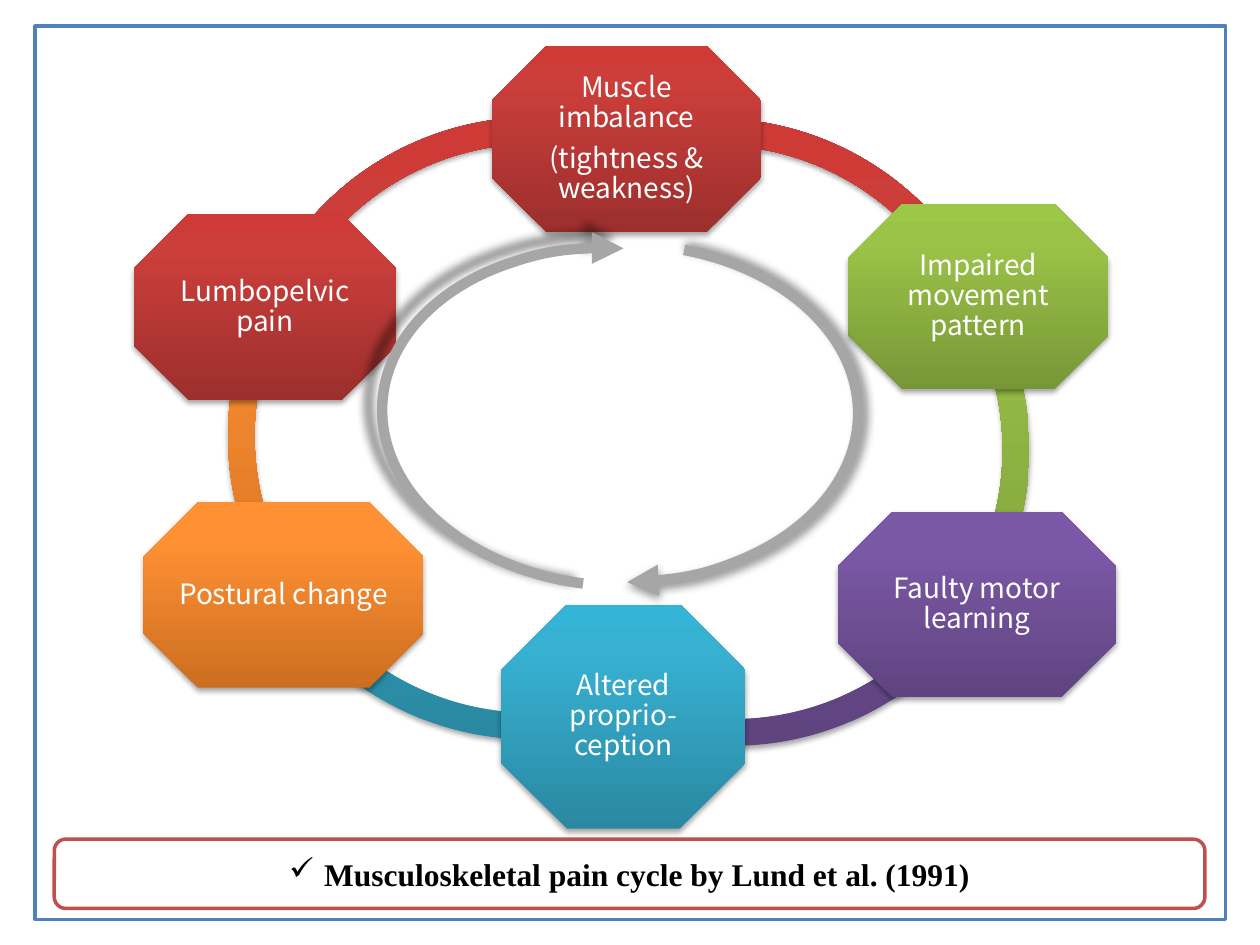
from copy import deepcopy

from lxml.etree import SubElement
from pptx import Presentation
from pptx.dml.color import RGBColor
from pptx.enum.shapes import MSO_SHAPE as SHAPE
from pptx.enum.text import MSO_ANCHOR as ANCHOR, PP_ALIGN as ALIGN
from pptx.oxml.ns import qn
from pptx.util import Pt

# Gradient stops from bottom to top: at 0, 80 and 100 percent
RED = ("9C2F2D", "CB3E3A", "CE3B37")
ORANGE = ("CC6E20", "FF9034", "FF9136")
TEAL = ("2A88A2", "37B1D2", "34B4D6")
PURPLE = ("5F4480", "7B58A6", "7C57A8")
GREEN = ("779737", "9BC348", "9DC746")

RING_SIZE = 338.4
RING_THICKNESS = 0.045
# left, top, start, end, colours
RING_PARTS = [
    (60, 41, 120.89, 173.08, RED),
    (54.3, 54, 87.83, 123.73, ORANGE),
    (58, 58.2, 42.72, 89.03, TEAL),
    (173.8, 61.8, 19.47, 67.43, PURPLE),
    (173.8, 61.8, 196.92, 19.48, GREEN),
    (163, 41.7, 151.27, 201.71, RED),
]
# left, top, width, height, colours, paragraphs
STAGES = [
    (205, 0.5, 154, 106, RED, "Muscle imbalance\n(tightness & weakness)"),
    (408.5, 90.5, 149, 106, GREEN, "Impaired movement pattern"),
    (403, 266.5, 158.5, 106, PURPLE, "Faulty motor learning"),
    (210.5, 319.5, 139.5, 128, TEAL, "Altered proprio-ception"),
    (6, 261, 160, 106, ORANGE, "Postural change"),
    (0.5, 96.5, 150, 106, RED, "Lumbopelvic pain"),
]
# left, top, start, end, rotation
DIRECTION_ARROWS = [
    (148, 113.7, 173.92, 53.58, 0),
    (142.2, 115.8, 166.35, 53.58, 183.6),
]


def color(value):
    return RGBColor.from_string(value)


def add_plain(slide, kind, left, top, width, height):
    shape = slide.shapes.add_shape(kind, Pt(left), Pt(top), Pt(width), Pt(height))
    shape.shadow.inherit = False
    return shape


def set_outline(shape, value, width):
    shape.line.color.rgb = color(value)
    shape.line.width = Pt(width)


def set_gradient(shape, colors):
    shape.line.fill.background()
    shape.fill.gradient()
    shape.fill.gradient_angle = 90
    stop_list = next(shape._element.spPr.iter(qn("a:gsLst")))
    stop_list.append(deepcopy(stop_list[-1]))
    for stop, position, value in zip(shape.fill.gradient_stops, (0, 0.8, 1), colors):
        stop.position = position
        stop.color.rgb = color(value)


def set_shadow(shape, blur, opacity, **settings):
    effects = shape._element.spPr.find(qn("a:effectLst"))
    shadow = SubElement(effects, qn("a:outerShdw"), blurRad=str(Pt(blur)),
                        rotWithShape="0", **settings)
    black = SubElement(shadow, qn("a:srgbClr"), val="000000")
    SubElement(black, qn("a:alpha"), val=str(opacity * 1000))


def set_drop_shadow(shape):
    set_shadow(shape, 3.1, 35, dist=str(Pt(1.8)), dir="5400000")


def draw_ring(slide, left, top):
    for x, y, start, end, colors in RING_PARTS:
        part = add_plain(slide, SHAPE.BLOCK_ARC, left + x, top + y, RING_SIZE, RING_SIZE)
        for i, value in enumerate((start, end, RING_THICKNESS)):
            part.adjustments[i] = value
        set_gradient(part, colors)
        set_drop_shadow(part)


def draw_stages(slide, left, top):
    for x, y, width, height, colors, label in STAGES:
        stage = add_plain(slide, SHAPE.OCTAGON, left + x, top + y, width, height)
        set_gradient(stage, colors)
        set_drop_shadow(stage)
        frame = stage.text_frame
        frame.word_wrap = True
        frame.vertical_anchor = ANCHOR.MIDDLE
        frame.margin_left = frame.margin_right = Pt(1.6)
        frame.margin_top = frame.margin_bottom = Pt(1.6)
        frame.text = label
        for i, paragraph in enumerate(frame.paragraphs):
            paragraph.alignment = ALIGN.CENTER
            paragraph.line_spacing = 0.9
            if i:
                paragraph.space_before = Pt(6)
            for run in paragraph.runs:
                run.font.name = "Noto Sans CJK KR"
                run.font.size = Pt(16)
                run.font.color.rgb = color("FFFFFF")


def draw_direction_arrows(slide, left, top):
    for x, y, start, end, rotation in DIRECTION_ARROWS:
        arrow = add_plain(slide, SHAPE.ARC, left + x, top + y, 266.4, 193)
        arrow.adjustments[0] = start
        arrow.adjustments[1] = end
        arrow.rotation = rotation
        arrow.fill.background()
        set_outline(arrow, "A6A6A6", 6)
        SubElement(arrow.line._get_or_add_ln(), qn("a:tailEnd"), type="triangle")
        set_shadow(arrow, 5, 40, sx="102000", sy="102000", algn="ctr")


def draw_caption(slide, left, top, width, height):
    caption = add_plain(slide, SHAPE.ROUNDED_RECTANGLE, left, top, width, height)
    caption.fill.solid()
    caption.fill.fore_color.rgb = color("FFFFFF")
    set_outline(caption, "C0504D", 2)
    frame = caption.text_frame
    frame.word_wrap = True
    frame.vertical_anchor = ANCHOR.MIDDLE
    frame.text = "Musculoskeletal pain cycle by Lund et al. (1991)"
    paragraph = frame.paragraphs[0]
    paragraph.alignment = ALIGN.CENTER
    # Check-mark bullet with a hanging indent
    properties = paragraph._p.get_or_add_pPr()
    properties.set("marL", str(Pt(20)))
    properties.set("indent", str(-Pt(20)))
    SubElement(properties, qn("a:buChar"), char="✓")
    font = paragraph.runs[0].font
    font.name = "Times New Roman"
    font.size = Pt(18)
    font.bold = True
    font.color.rgb = color("000000")


def draw_border(slide, left, top, width, height):
    border = add_plain(slide, SHAPE.RECTANGLE, left, top, width, height)
    border.fill.solid()
    border.fill.fore_color.rgb = color("FFFFFF")
    set_outline(border, "4F81BD", 2)


def draw_cycle(slide, left, top):
    draw_ring(slide, left, top)
    draw_stages(slide, left, top)
    draw_direction_arrows(slide, left, top)


def main():
    deck = Presentation()
    deck.slide_width, deck.slide_height = Pt(720), Pt(540)
    slide = deck.slides.add_slide(deck.slide_layouts[6])
    draw_border(slide, 20, 15, 680.4, 510.4)
    draw_cycle(slide, 76, 26)
    draw_caption(slide, 31, 479.5, 657.5, 39.6)
    deck.save("out.pptx")


if __name__ == "__main__":
    main()
